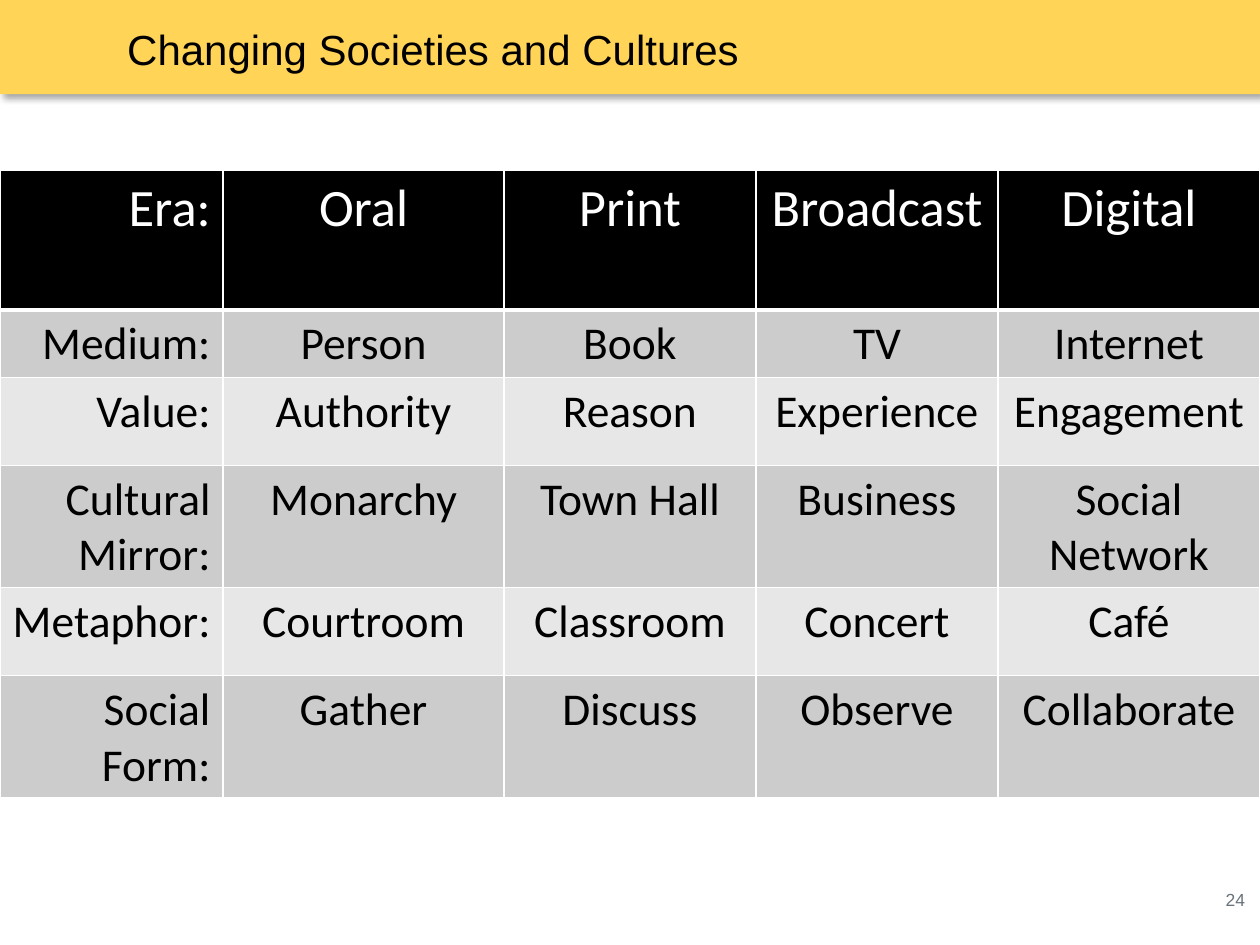
from lxml import etree
from pptx import Presentation
from pptx.dml.color import RGBColor
from pptx.enum.shapes import MSO_SHAPE
from pptx.enum.text import MSO_ANCHOR, MSO_AUTO_SIZE, PP_ALIGN
from pptx.oxml import parse_xml
from pptx.oxml.ns import qn
from pptx.util import Cm, Pt

RECT = MSO_SHAPE.RECTANGLE
MIDDLE, TOP = MSO_ANCHOR.MIDDLE, MSO_ANCHOR.TOP
NO_FIT = MSO_AUTO_SIZE.NONE
LEFT, CENTER, RIGHT = PP_ALIGN.LEFT, PP_ALIGN.CENTER, PP_ALIGN.RIGHT
NS = 'xmlns:a="http://schemas.openxmlformats.org/drawingml/2006/main"'

WIDTH, HEIGHT = 25.4, 19.05
COLUMNS = [4.5, 5.66, 5.08, 4.88, 5.28]
ROWS = [2.82, 1.35, 1.78, 1.78, 1.78, 1.78]
ERAS = [
    ["Era:", "Oral", "Print", "Broadcast", "Digital"],
    ["Medium:", "Person", "Book", "TV", "Internet"],
    ["Value:", "Authority", "Reason", "Experience", "Engagement"],
    ["Cultural Mirror:", "Monarchy", "Town Hall", "Business", "Social Network"],
    ["Metaphor:", "Courtroom", "Classroom", "Concert", "Café"],
    ["Social Form:", "Gather", "Discuss", "Observe", "Collaborate"],
]


def rgb(code):
    """Return the colour for a hex string."""
    return RGBColor.from_string(code)


def write(tf, text, align, color, **font):
    """Put one formatted line of text in a frame."""
    p = tf.paragraphs[0]
    p.alignment = align
    r = p.add_run()
    r.text = text
    for name, value in font.items():
        setattr(r.font, name, value)
    r.font.color.rgb = rgb(color)


def set_frame(tf, **values):
    """Set the attributes of a text frame."""
    for name, value in values.items():
        setattr(tf, name, value)


def add_header(s, x, y, w, h):
    """Draw the shadowed band with the title on it."""
    band = s.shapes.add_shape(RECT, Cm(x), Cm(y), Cm(w), Cm(h))
    band.fill.solid()
    band.fill.fore_color.rgb = rgb("FFD457")
    band.line.fill.background()
    band.shadow.inherit = False
    effects = band._element.spPr.find(qn("a:effectLst"))
    effects.append(parse_xml(
        f'<a:outerShdw {NS} blurRad="{Pt(4)}" dist="{Pt(3)}" dir="2700000" '
        'algn="tl" rotWithShape="0"><a:srgbClr val="000000">'
        '<a:alpha val="35000"/></a:srgbClr></a:outerShdw>'))
    title = s.shapes.title
    band._element.addnext(title._element)
    title.left, title.top = Cm(x + 2.31), Cm(y)
    title.width, title.height = Cm(w - 3), Cm(h + 0.08)
    set_frame(title.text_frame, word_wrap=True, auto_size=NO_FIT,
              vertical_anchor=MIDDLE)
    write(title.text_frame, "Changing Societies and Cultures", LEFT, "000000",
          size=Pt(24), name="Arial")


def set_borders(cell, bottom):
    """Give a cell white borders, with its own bottom width."""
    tcPr = cell._tc.get_or_add_tcPr()
    for side, width in dict(L=1, R=1, T=1, B=bottom).items():
        ln = etree.SubElement(tcPr, qn(f"a:ln{side}"), w=str(Pt(width)))
        fill = etree.SubElement(ln, qn("a:solidFill"))
        etree.SubElement(fill, qn("a:srgbClr"), val="FFFFFF")


def add_eras(s, x, y, w, h):
    """Draw the table that compares the eras."""
    table = s.shapes.add_table(len(ROWS), len(COLUMNS),
                               Cm(x), Cm(y), Cm(w), Cm(h)).table
    for column, width in zip(table.columns, COLUMNS):
        column.width = Cm(width)
    for i, (height, texts) in enumerate(zip(ROWS, ERAS)):
        table.rows[i].height = Cm(height)
        header = i == 0
        fill = "000000" if header else "CCCCCC" if i % 2 else "E7E7E7"
        for j, text in enumerate(texts):
            cell = table.cell(i, j)
            set_borders(cell, 3 if header else 1)
            cell.fill.solid()
            cell.fill.fore_color.rgb = rgb(fill)
            write(cell.text_frame, text, CENTER if j else RIGHT,
                  "FFFFFF" if header else "000000",
                  size=Pt(30 if header else 26), name="Calibri", bold=False)


def add_number(s, x, y, w, h):
    """Write the slide number."""
    tf = s.shapes.add_textbox(Cm(x), Cm(y), Cm(w), Cm(h)).text_frame
    set_frame(tf, word_wrap=False, vertical_anchor=TOP)
    write(tf, "24", LEFT, "6A737B", size=Pt(10), name="Arial")


def main():
    """Build and save the slide."""
    prs = Presentation()
    prs.slide_width, prs.slide_height = Cm(WIDTH), Cm(HEIGHT)
    s = prs.slides.add_slide(prs.slide_layouts[5])
    add_header(s, 0, 0, WIDTH, 1.9)
    add_number(s, 24.46, 17.8, 0.94, 0.94)
    add_eras(s, 0, 3.43, WIDTH, sum(ROWS))
    prs.save("out.pptx")


if __name__ == "__main__":
    main()
